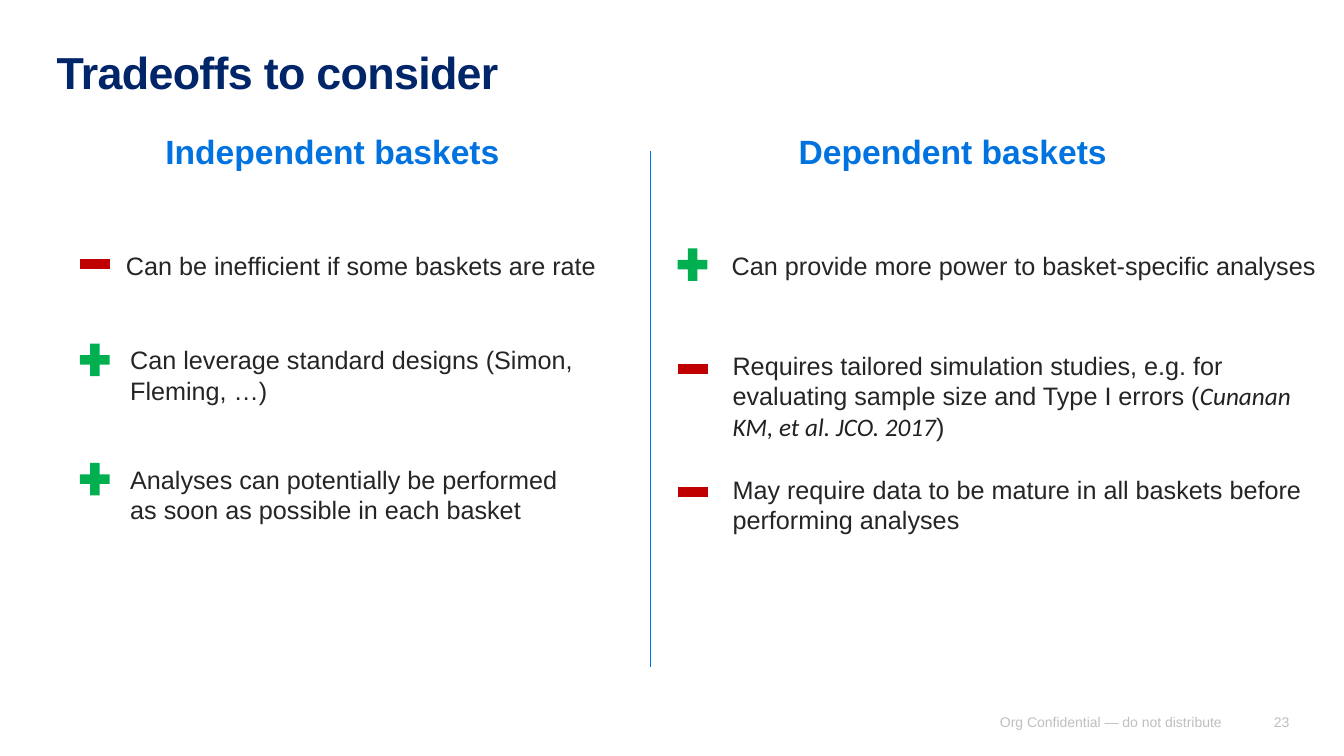
from lxml.etree import SubElement
from pptx import Presentation
from pptx.dml.color import RGBColor
from pptx.enum.shapes import MSO_CONNECTOR, MSO_SHAPE
from pptx.enum.text import MSO_ANCHOR, MSO_AUTO_SIZE, PP_ALIGN
from pptx.oxml.ns import qn
from pptx.util import Pt

COLORS = {
    "navy": "002569", "blue": "0073E0", "text": "272524", "citation": "212121",
    "footer": "BFBFBF", "pro": "00B050", "con": "C00000", "white": "FFFFFF",
}
STYLES = {
    "title": {"size": Pt(32), "bold": True, "color": "navy"},
    "heading": {"size": Pt(24), "bold": True, "color": "blue"},
    "body": {"size": Pt(18), "color": "text"},
    "citation": {"size": Pt(18), "name": "Calibri", "italic": True, "color": "citation"},
    "footer": {"size": Pt(10), "color": "footer"},
}
ICONS = {"pro": (MSO_SHAPE.MATH_PLUS, 29), "con": (MSO_SHAPE.MATH_MINUS, 29.5)}
ICON_HEIGHT = 31.7
NO_MARGINS = {"margin_left": 0, "margin_right": 0, "margin_top": 0, "margin_bottom": 0}


def color(name):
    return RGBColor.from_string(COLORS[name])


def points(*lengths):
    return [Pt(length) for length in lengths]


class SlideBuilder:
    def __init__(self, deck):
        self.page = deck.slides.add_slide(deck.slide_layouts[5])
        background = self.page.background.fill
        background.solid()
        background.fore_color.rgb = color("white")

    def add_spans(self, paragraph, spans):
        """Add (text, style name) spans to a paragraph."""
        for text, style in spans:
            span = paragraph.add_run()
            span.text = text
            for key, value in {"name": "Arial", **STYLES[style]}.items():
                if key == "color":
                    span.font.color.rgb = color(value)
                else:
                    setattr(span.font, key, value)

    def title(self, text, left, top, width, height):
        box = self.page.shapes.title
        box.left, box.top, box.width, box.height = points(left, top, width, height)
        frame_format = {"vertical_anchor": MSO_ANCHOR.TOP, "word_wrap": True,
                        "auto_size": MSO_AUTO_SIZE.NONE, **NO_MARGINS}
        for key, value in frame_format.items():
            setattr(box.text_frame, key, value)
        paragraph = box.text_frame.paragraphs[0]
        paragraph.alignment = PP_ALIGN.LEFT
        paragraph.line_spacing = 0.9
        self.add_spans(paragraph, [(text, "title")])
        paragraph.runs[0]._r.get_or_add_rPr().set("spc", "-50")

    def text(self, spans, left, top, width, height, align=PP_ALIGN.LEFT, **frame_format):
        box = self.page.shapes.add_textbox(*points(left, top, width, height))
        for key, value in {"word_wrap": True, **frame_format}.items():
            setattr(box.text_frame, key, value)
        paragraph = box.text_frame.paragraphs[0]
        paragraph.alignment = align
        self.add_spans(paragraph, spans)

    def heading(self, text, left, width):
        self.text([(text, "heading")], left, 90, width, 36.35, word_wrap=False,
                  auto_size=MSO_AUTO_SIZE.SHAPE_TO_FIT_TEXT)

    def footer(self, text, left, width):
        self.text([(text, "footer")], left, 502.5, width, 19.5, PP_ALIGN.RIGHT,
                  vertical_anchor=MSO_ANCHOR.BOTTOM, **NO_MARGINS)

    def icon(self, kind, left, top):
        preset, width = ICONS[kind]
        shape = self.page.shapes.add_shape(preset, *points(left, top, width, ICON_HEIGHT))
        shape.shadow.inherit = False
        shape.fill.solid()
        shape.fill.fore_color.rgb = color(kind)
        shape.line.fill.background()

    def divider(self, left, top, bottom):
        line = self.page.shapes.add_connector(
            MSO_CONNECTOR.STRAIGHT, *points(left, top, left, bottom))
        line.line.color.rgb = color("blue")
        line.line.width = Pt(0.5)
        SubElement(line._element.spPr, qn("a:effectLst"))

    def tradeoff(self, kind, icon_left, icon_top, text_box, spans, wrap=True):
        self.icon(kind, icon_left, icon_top)
        self.text(spans, *text_box, word_wrap=wrap,
                  auto_size=MSO_AUTO_SIZE.SHAPE_TO_FIT_TEXT)


def main():
    deck = Presentation()
    deck.slide_width, deck.slide_height = points(960, 540)
    slide = SlideBuilder(deck)

    slide.title("Tradeoffs to consider", 40.5, 36, 880.5, 72)
    slide.divider(464.4, 108, 476.6)
    slide.heading("Independent baskets", 111, 255.6)
    slide.heading("Dependent baskets", 563.4, 236.9)

    left_icons, right_icons = 53.2, 480.2
    tradeoffs = [
        ("con", left_icons, 172.8, (82.8, 175, 353.5, 29),
         [("Can be inefficient if some baskets are rate", "body")], False),
        ("pro", left_icons, 241.2, (85.9, 242.6, 337, 51),
         [("Can leverage standard designs (Simon, Fleming, …)", "body")]),
        ("pro", left_icons, 326.4, (85.9, 327.8, 337, 51),
         [("Analyses can potentially be performed as soon as possible in each basket",
           "body")]),
        ("pro", right_icons, 173.2, (515.6, 175, 435.6, 29),
         [("Can provide more power to basket-specific analyses", "body")], False),
        ("con", right_icons, 247.7, (516.2, 246.8, 425.5, 72.7),
         [("Requires tailored simulation studies, e.g. for evaluating sample size "
           "and Type I errors (", "body"),
          ("Cunanan KM, et al. JCO. 2017", "citation"), (")", "body")]),
        ("con", right_icons, 335.7, (516.2, 334.9, 425.5, 51),
         [("May require data to be mature in all baskets before performing analyses",
           "body")]),
    ]
    for tradeoff in tradeoffs:
        slide.tradeoff(*tradeoff)

    slide.footer("Org Confidential — do not distribute", 696.2, 176.4)
    slide.footer("23", 885, 36)
    deck.save("out.pptx")


if __name__ == "__main__":
    main()
